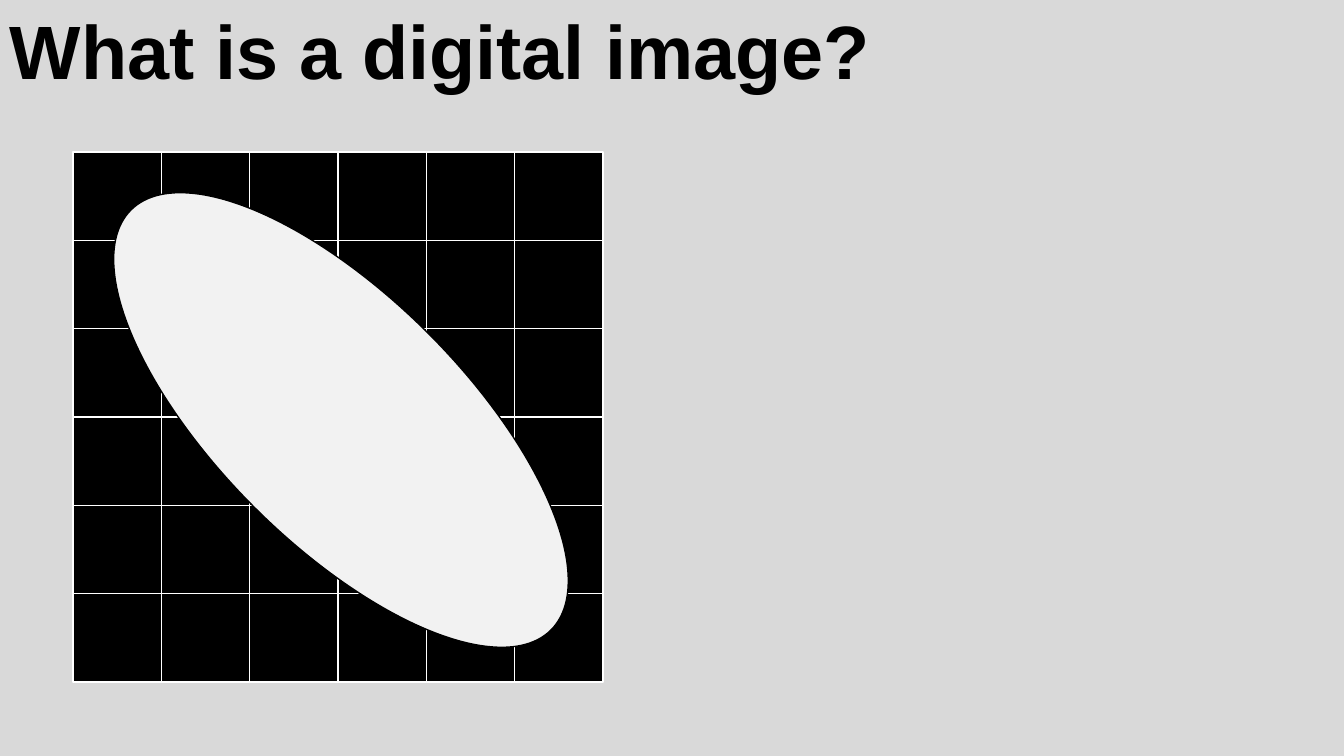
from pptx import Presentation
from pptx.dml.color import RGBColor
from pptx.enum.shapes import MSO_SHAPE
from pptx.enum.text import MSO_AUTO_SIZE
from pptx.util import Pt

RECT = MSO_SHAPE.RECTANGLE
OVAL = MSO_SHAPE.OVAL
FIT = MSO_AUTO_SIZE.SHAPE_TO_FIT_TEXT

SCALE = 914400 / 100.8  # EMU per px
FONT = "Arial"
COLORS = {
    "back": "D9D9D9",
    "ink": "000000",
    "grid": "FFFFFF",
    "oval": "F2F2F2",
}


def px(size):
    return round(size * SCALE)


def color(name):
    return RGBColor.from_string(COLORS[name])


def add_title(slide, text, left, top, width, height):
    box = slide.shapes.add_textbox(px(left), px(top), px(width), px(height))
    frame = box.text_frame
    frame.word_wrap = False
    frame.auto_size = FIT
    run = frame.paragraphs[0].add_run()
    run.text = text
    run.font.name = FONT
    run.font.size = Pt(54)
    run.font.bold = True
    run.font.color.rgb = color("ink")


def add_form(shapes, kind, left, top, width, height, fill, line):
    form = shapes.add_shape(kind, px(left), px(top), px(width), px(height))
    form.shadow.inherit = False
    form.fill.solid()
    form.fill.fore_color.rgb = color(fill)
    form.line.color.rgb = color(line)
    form.line.width = Pt(1)
    return form


def add_grid(slide, left, top, side, count):
    group = slide.shapes.add_group_shape()
    cell = side / count
    for row in range(count):
        for col in range(count):
            add_form(group.shapes, RECT, left + col * cell, top + row * cell,
                     cell, cell, "ink", "grid")


def main():
    deck = Presentation()
    deck.slide_width = px(1344)
    deck.slide_height = px(756)
    slide = deck.slides.add_slide(deck.slide_layouts[6])

    # Background
    slide.background.fill.solid()
    slide.background.fill.fore_color.rgb = color("back")

    # Heading
    add_title(slide, "What is a digital image?", 0, -1, 890, 102)

    # Pixel grid with the tilted oval on top
    add_grid(slide, 73, 152, 530, 6)
    oval = add_form(slide.shapes, OVAL, 44, 297, 594, 246, "oval", "ink")
    oval.rotation = 45

    deck.save("out.pptx")


if __name__ == "__main__":
    main()
